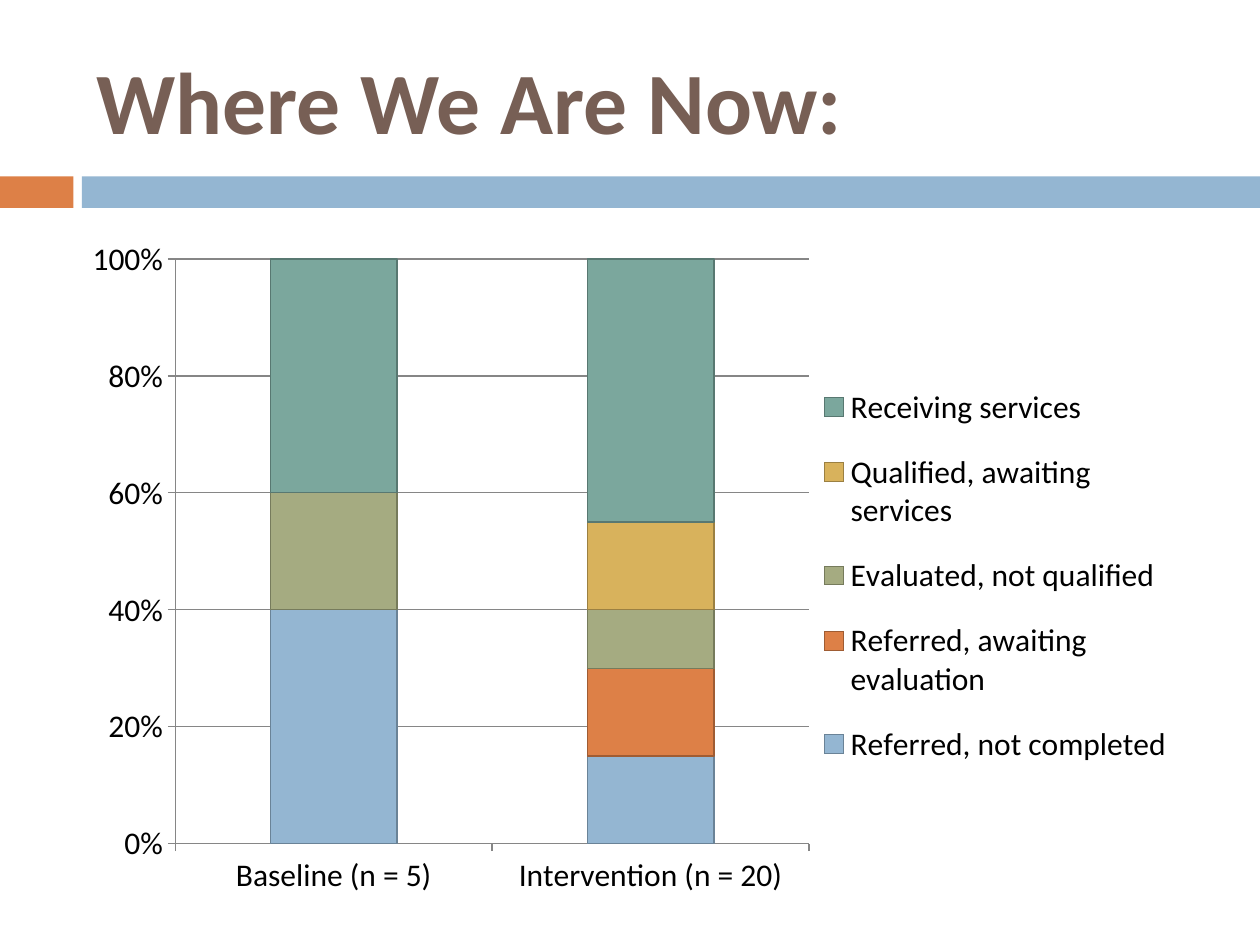
from lxml import etree
from pptx import Presentation
from pptx.chart.data import CategoryChartData
from pptx.dml.color import RGBColor
from pptx.enum import chart as ch, shapes, text
from pptx.oxml.ns import qn
from pptx.util import Pt

BLUE = RGBColor(0x94, 0xB6, 0xD2)
ORANGE = RGBColor(0xDD, 0x80, 0x47)
GREEN = RGBColor(0xA5, 0xAB, 0x81)
GOLD = RGBColor(0xD8, 0xB2, 0x5C)
TEAL = RGBColor(0x7B, 0xA7, 0x9D)
BROWN = RGBColor(0x77, 0x5F, 0x55)
BLACK = RGBColor(0, 0, 0)
GREY = RGBColor(0x86, 0x86, 0x86)
FACE = "Calibri"
GROUPS = ("Baseline (n = 5)", "Intervention (n = 20)")
STAGES = (
    ("Referred, not completed", (0.4, 0.15), BLUE),
    ("Referred, awaiting evaluation", (0, 0.15), ORANGE),
    ("Evaluated, not qualified", (0.2, 0.1), GREEN),
    ("Qualified, awaiting services", (0, 0.15), GOLD),
    ("Receiving services", (0.4, 0.45), TEAL),
)


def assign(item, **values):
    """Set attributes of an object from a dict of values."""
    for name, value in values.items():
        setattr(item, name, value)


def style(font, size, color, bold=False):
    """Set face, size, weight and colour of a font."""
    assign(font, name=FACE, size=Pt(size), bold=bold)
    font.color.rgb = color


def stroke(line, color):
    """Give a line a thin solid colour."""
    line.color.rgb = color
    line.width = Pt(0.75)


def shade(color):
    """Return a darker tone of a colour."""
    return RGBColor(*(int(part * 0.72) for part in color))


def add_bar(slide, left, width, color):
    """Add one piece of the band below the title."""
    bar = slide.shapes.add_shape(
        shapes.MSO_SHAPE.RECTANGLE, Pt(left), Pt(100.8), Pt(width), Pt(18))
    bar.shadow.inherit = False
    bar.fill.solid()
    bar.fill.fore_color.rgb = color
    bar.line.fill.background()


def add_title(slide, words):
    """Add the slide heading."""
    box = slide.shapes.add_textbox(Pt(48), Pt(18), Pt(642), Pt(78))
    frame = box.text_frame
    assign(frame, word_wrap=True, vertical_anchor=text.MSO_ANCHOR.MIDDLE)
    run = frame.paragraphs[0].add_run()
    run.text = words
    style(run.font, 50, BROWN, True)


def place(part, index, target, **spots):
    """Fix the place of a chart part as fractions of the chart."""
    for old in part.findall(qn("c:layout")):
        part.remove(old)
    layout = etree.Element(qn("c:layout"))
    manual = etree.SubElement(layout, qn("c:manualLayout"))
    values = {"xMode": "edge", "yMode": "edge", **spots}
    if target:
        values = {"layoutTarget": target, **values}
    for name, value in values.items():
        etree.SubElement(manual, qn("c:" + name)).set("val", str(value))
    part.insert(index, layout)


def add_chart(slide):
    """Add the stacked columns with axes and legend."""
    data = CategoryChartData(number_format="0%")
    data.categories = GROUPS
    for name, values, _ in STAGES:
        data.add_series(name, values)
    chart = slide.shapes.add_chart(
        ch.XL_CHART_TYPE.COLUMN_STACKED,
        Pt(36), Pt(132), Pt(642), Pt(390), data).chart
    assign(chart, has_title=False, has_legend=True)
    style(chart.font, 18, BLACK)
    plot = chart.plots[0]
    assign(plot, gap_width=150, overlap=100, vary_by_categories=False)
    for series, (_, _, color) in zip(plot.series, STAGES):
        series.format.fill.solid()
        series.format.fill.fore_color.rgb = color
        stroke(series.format.line, shade(color))
    axis = chart.value_axis
    assign(axis, minimum_scale=0, maximum_scale=1, major_unit=0.2,
           has_major_gridlines=True)
    assign(axis.tick_labels, number_format="0%", number_format_is_linked=False)
    stroke(axis.major_gridlines.format.line, GREY)
    for axis in (chart.category_axis, chart.value_axis):
        axis.major_tick_mark = ch.XL_TICK_MARK.OUTSIDE
        stroke(axis.format.line, GREY)
        style(axis.tick_labels.font, 18, BLACK)
    legend = chart.legend
    assign(legend, position=ch.XL_LEGEND_POSITION.RIGHT,
           include_in_layout=False)
    style(legend.font, 18, BLACK)
    area = chart.element.find(".//" + qn("c:plotArea"))
    place(area, 0, "inner", x=0.1, y=0.041, w=0.564, h=0.857)
    key = chart.element.find(".//" + qn("c:legend"))
    place(key, 1, None, x=0.67, y=0.19, w=0.32, h=0.63)


def main():
    """Build and save the slide."""
    deck = Presentation()
    assign(deck, slide_width=Pt(720), slide_height=Pt(540))
    slide = deck.slides.add_slide(deck.slide_layouts[6])
    add_bar(slide, 0, 42, ORANGE)
    add_bar(slide, 46.8, 673.2, BLUE)
    add_title(slide, "Where We Are Now:")
    add_chart(slide)
    deck.save("out.pptx")


if __name__ == "__main__":
    main()
